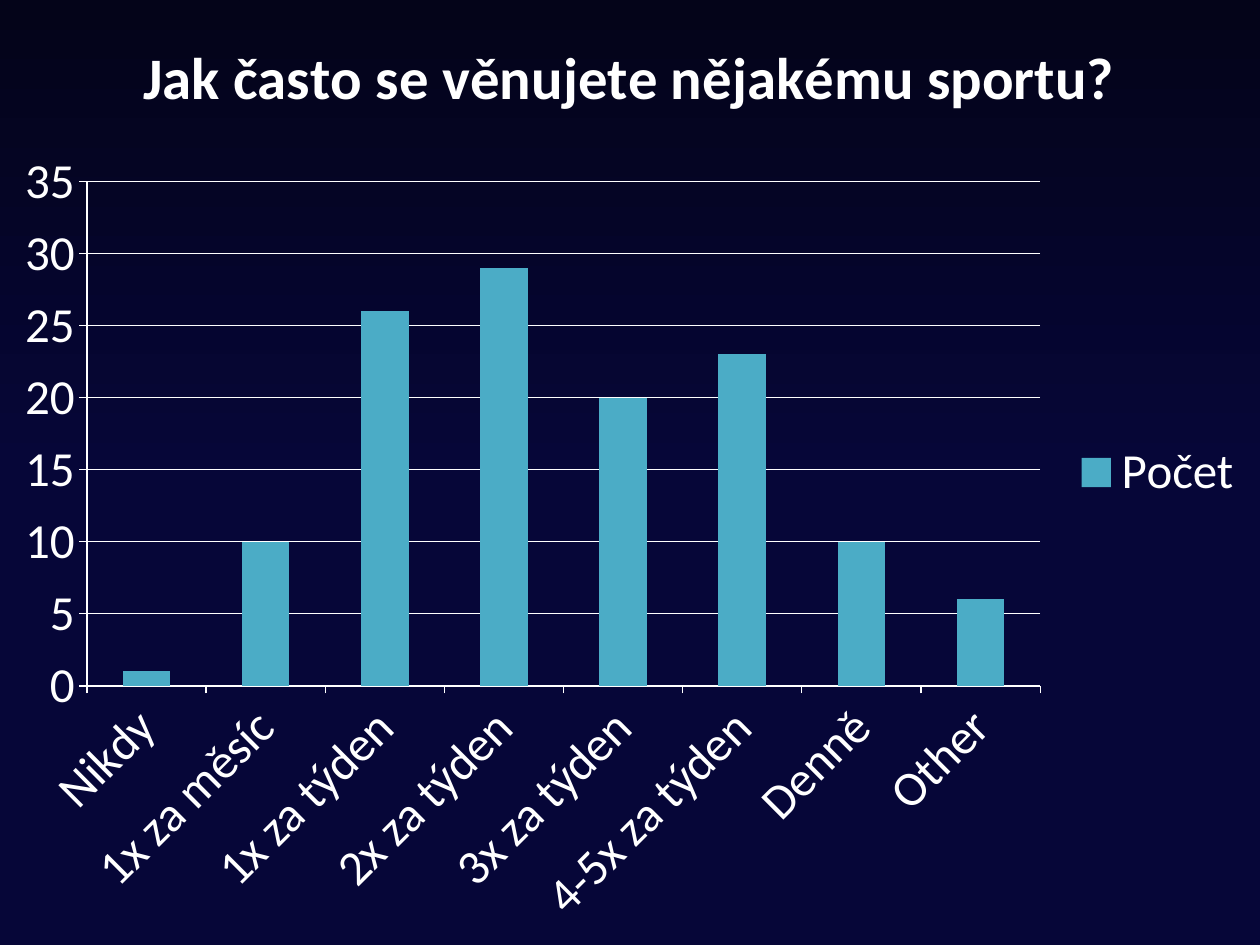
"""Build a slide with a column chart of how often people do sport."""
from pptx import Presentation
from pptx.chart.data import CategoryChartData
from pptx.dml.color import RGBColor
from pptx.enum.chart import XL_CHART_TYPE, XL_LEGEND_POSITION, XL_TICK_MARK
from pptx.util import Pt

WHITE = RGBColor(0xFF, 0xFF, 0xFF)
TEAL = RGBColor(0x4B, 0xAC, 0xC6)
NIGHT = RGBColor(0x04, 0x04, 0x19)
NAVY = RGBColor(0x06, 0x06, 0x38)
FONT = "Calibri"

prs = Presentation()
prs.slide_width, prs.slide_height = Pt(720), Pt(540)
s = prs.slides.add_slide(prs.slide_layouts[6])

fill = s.background.fill
fill.gradient()
fill.gradient_angle = 270
for stop, color, position in zip(fill.gradient_stops, (NIGHT, NAVY), (0, 0.5)):
    stop.color.rgb = color
    stop.position = position

answers = {
    "Nikdy": 1,
    "1x za měsíc": 10,
    "1x za týden": 26,
    "2x za týden": 29,
    "3x za týden": 20,
    "4-5x za týden": 23,
    "Denně": 10,
    "Other": 6,
}
data = CategoryChartData()
data.categories = list(answers)
data.add_series("Počet", list(answers.values()))
chart = s.shapes.add_chart(
    XL_CHART_TYPE.COLUMN_CLUSTERED, 0, 0, prs.slide_width, prs.slide_height, data
).chart
chart.font.name = FONT
chart.font.size = Pt(28)
chart.font.color.rgb = WHITE

chart.has_title = True
chart.chart_title.include_in_layout = False
r = chart.chart_title.text_frame.paragraphs[0].add_run()
r.text = "Jak často se věnujete nějakému sportu? "
r.font.name = FONT
r.font.size = Pt(33.6)
r.font.bold = True
r.font.color.rgb = WHITE

chart.has_legend = True
chart.legend.position = XL_LEGEND_POSITION.RIGHT
chart.legend.include_in_layout = False

plot = chart.plots[0]
plot.gap_width = 150
plot.vary_by_categories = False
series = plot.series[0]
series.format.fill.solid()
series.format.fill.fore_color.rgb = TEAL

cat_axis, val_axis = chart.category_axis, chart.value_axis
val_axis.minimum_scale, val_axis.maximum_scale, val_axis.major_unit = 0, 35, 5
val_axis.has_major_gridlines = True
for axis in (cat_axis, val_axis):
    axis.major_tick_mark = XL_TICK_MARK.OUTSIDE
    axis.format.line.color.rgb = WHITE
    axis.format.line.width = Pt(0.75)
    axis.tick_labels.font.name = FONT
    axis.tick_labels.font.size = Pt(28)
    axis.tick_labels.font.color.rgb = WHITE
val_axis.major_gridlines.format.line.color.rgb = WHITE
val_axis.major_gridlines.format.line.width = Pt(0.75)
cat_axis._element.txPr.bodyPr.set("rot", "-2700000")

prs.save("out.pptx")
